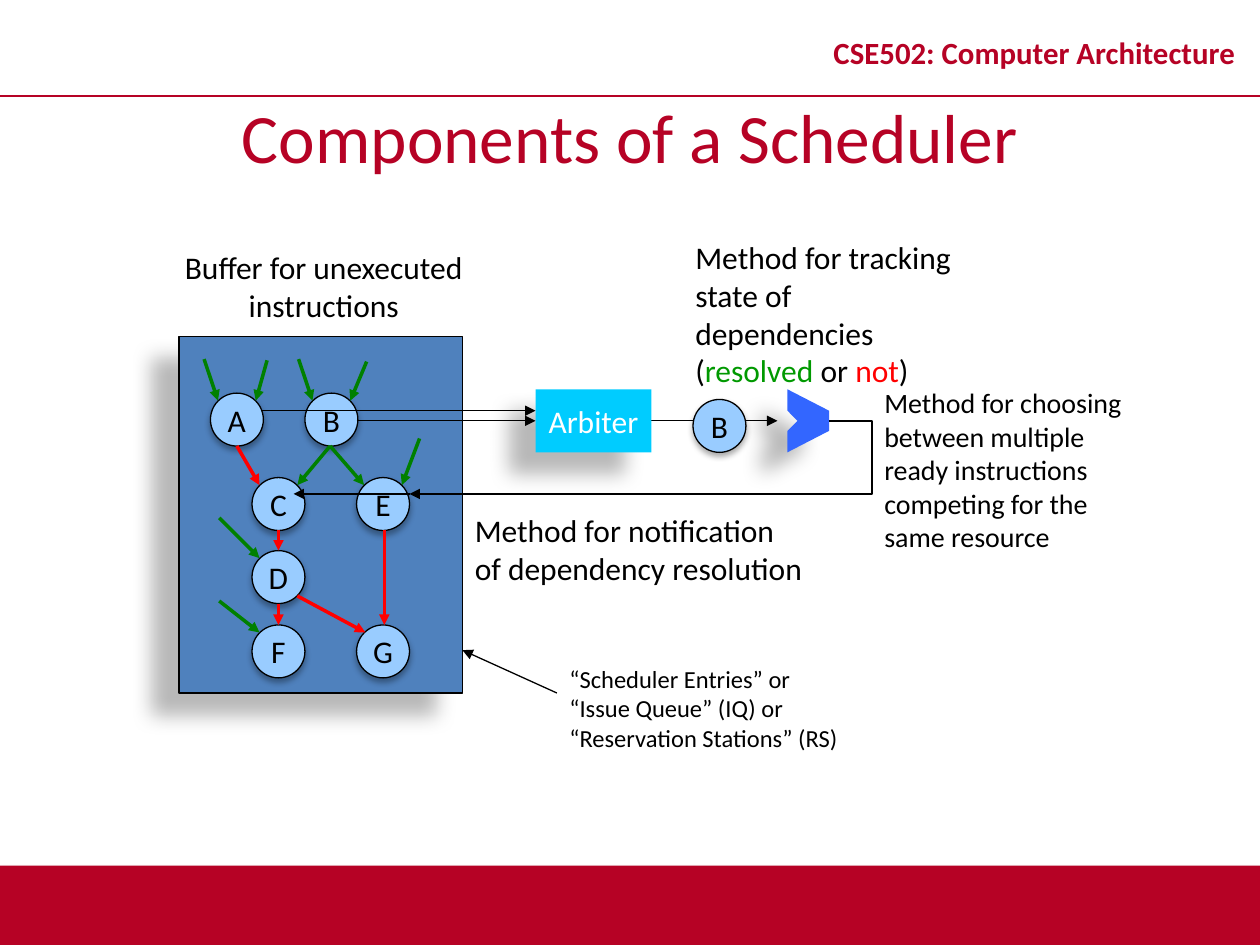
from lxml.etree import SubElement
from pptx import Presentation
from pptx.dml.color import RGBColor
from pptx.enum.shapes import MSO_CONNECTOR as CONNECTOR, MSO_SHAPE as SHAPE
from pptx.enum.text import MSO_ANCHOR as ANCHOR, PP_ALIGN as ALIGN
from pptx.oxml.ns import qn
from pptx.util import Inches, Pt

CRIMSON = RGBColor(0xB6, 0x02, 0x25)
BLACK = RGBColor(0x00, 0x00, 0x00)
WHITE = RGBColor(0xFF, 0xFF, 0xFF)
BUFFER_BLUE = RGBColor(0x4F, 0x81, 0xBD)
NODE_BLUE = RGBColor(0x99, 0xCC, 0xFF)
ARBITER_BLUE = RGBColor(0x00, 0xCC, 0xFF)
UNIT_BLUE = RGBColor(0x33, 0x66, 0xFF)
GREEN = RGBColor(0x00, 0x80, 0x00)
RESOLVED_GREEN = RGBColor(0x00, 0x99, 0x00)
RED = RGBColor(0xFF, 0x00, 0x00)

FONT = "Calibri"
NODE_SIZE = 0.42
BAR_SHADOW = (35, 3.1, 1.8, 90)
BLOCK_SHADOW = (28, 11.8, 19.7, 141)
NODE_SHADOW = (32, 3.5, 2.2, 90)


def paint(shape, fill, shadow, outlined=False, label="", label_color=BLACK):
    shape.fill.solid()
    shape.fill.fore_color.rgb = fill
    if outlined:
        shape.line.color.rgb = BLACK
        shape.line.width = Pt(0.75)
    else:
        shape.line.fill.background()
    shape.shadow.inherit = False
    opacity, blur, distance, angle = shadow
    outer = SubElement(shape._element.spPr.find(qn("a:effectLst")), qn("a:outerShdw"),
                       blurRad=str(Pt(blur)), dist=str(Pt(distance)),
                       dir=str(angle * 60000), algn="ctr", rotWithShape="0")
    color = SubElement(outer, qn("a:srgbClr"), val="000000")
    SubElement(color, qn("a:alpha"), val=str(opacity * 1000))
    if label:
        frame = shape.text_frame
        frame.text = label
        frame.word_wrap = False
        frame.vertical_anchor = ANCHOR.MIDDLE
        paragraph = frame.paragraphs[0]
        paragraph.alignment = ALIGN.CENTER
        paragraph.font.name = FONT
        paragraph.font.size = Pt(18)
        paragraph.font.color.rgb = label_color


def stroke(line, color=BLACK, width=0.75, arrow=True):
    line.line.color.rgb = color
    line.line.width = Pt(width)
    if arrow:
        SubElement(line.line._get_or_add_ln(), qn("a:tailEnd"), type="triangle")
    SubElement(line._element.spPr, qn("a:effectLst"))


presentation = Presentation()
presentation.slide_width = Inches(10)
presentation.slide_height = Inches(7.5)
slide = presentation.slides.add_slide(presentation.slide_layouts[5])
shapes = slide.shapes

footer = shapes.add_shape(SHAPE.RECTANGLE, 0, Inches(6.87), Inches(10), Inches(0.63))
paint(footer, CRIMSON, BAR_SHADOW)
rule = shapes.add_connector(CONNECTOR.STRAIGHT, 0, Inches(0.76), Inches(10), Inches(0.76))
stroke(rule, CRIMSON, 1, arrow=False)

title = shapes.title
title.left, title.top = Inches(0), Inches(0.76)
title.width, title.height = Inches(10), Inches(0.63)
title.text_frame.text = "Components of a Scheduler"
title.text_frame.vertical_anchor = ANCHOR.MIDDLE
paragraph = title.text_frame.paragraphs[0]
paragraph.alignment = ALIGN.CENTER
font = paragraph.runs[0].font
font.name, font.size, font.color.rgb = FONT, Pt(39.6), CRIMSON

buffer = shapes.add_shape(SHAPE.RECTANGLE, Inches(1.42), Inches(2.67), Inches(2.25), Inches(2.83))
paint(buffer, BUFFER_BLUE, BLOCK_SHADOW, outlined=True)

nodes = [
    ("A", 1.67, 3.12), ("B", 2.42, 3.12),
    ("C", 2, 3.79), ("E", 2.83, 3.79),
    ("D", 2, 4.37),
    ("F", 2, 4.96), ("G", 2.83, 4.96),
]
for name, left, top in nodes:
    node = shapes.add_shape(SHAPE.OVAL, Inches(left), Inches(top), Inches(NODE_SIZE), Inches(NODE_SIZE))
    paint(node, NODE_BLUE, NODE_SHADOW, True, name)

resolved = [
    (1.62, 2.85, 1.73, 3.18), (2.12, 2.86, 2.03, 3.18),
    (2.37, 2.85, 2.48, 3.18), (2.91, 2.87, 2.78, 3.18),
    (3.33, 3.48, 3.19, 3.85), (1.74, 4.11, 2.06, 4.43),
    (1.74, 4.77, 2.06, 5.02),
    (2.62, 3.54, 2.36, 3.85), (2.62, 3.54, 2.89, 3.85),
]
unresolved = [
    (1.88, 3.54, 2.06, 3.85), (3.05, 4.21, 3.05, 4.96),
    (2.21, 4.21, 2.21, 4.37), (2.21, 4.79, 2.21, 4.96),
    (2.36, 4.73, 2.9, 5.02),
]
signals = [
    (5.17, 3.34, 6.17, 3.34), (2.08, 3.26, 4.25, 3.26),
    (2.83, 3.34, 4.25, 3.34), (3.25, 3.92, 2.33, 3.92),
    (4.42, 5.5, 3.67, 5.16),
]
for group, color, width in [(resolved, GREEN, 2), (unresolved, RED, 2), (signals, BLACK, 0.75)]:
    for ends in group:
        arrow = shapes.add_connector(CONNECTOR.STRAIGHT, *[Inches(value) for value in ends])
        stroke(arrow, color, width)

unit_points = [(6.25, 3.09), (6.25, 3.26), (6.33, 3.34), (6.25, 3.42),
               (6.25, 3.59), (6.58, 3.42), (6.58, 3.26)]
notify_points = [(6.58, 3.34), (6.92, 3.34), (6.92, 3.92), (3.25, 3.92)]
outlines = []
for points, closed in [(unit_points, True), (notify_points, False)]:
    corners = [(Inches(x), Inches(y)) for x, y in points]
    builder = shapes.build_freeform(*corners[0])
    builder.add_line_segments(corners[1:], close=closed)
    outlines.append(builder.convert_to_shape())
unit, notify = outlines
paint(unit, UNIT_BLUE, BLOCK_SHADOW)
notify.fill.background()
stroke(notify)

arbiter = shapes.add_shape(SHAPE.RECTANGLE, Inches(4.25), Inches(3.09), Inches(0.92), Inches(0.5))
paint(arbiter, ARBITER_BLUE, BLOCK_SHADOW, label="Arbiter", label_color=WHITE)
issued = shapes.add_shape(SHAPE.OVAL, Inches(5.5), Inches(3.17), Inches(NODE_SIZE), Inches(NODE_SIZE))
paint(issued, NODE_BLUE, NODE_SHADOW, True, "B")

captions = [
    (6.42, 0.13, 3.58, 0.63, 17.6, CRIMSON, ALIGN.CENTER, True, ["CSE502: Computer Architecture"]),
    (1.35, 1.92, 2.44, 0.71, 18, BLACK, ALIGN.CENTER, False, ["Buffer for unexecuted", "instructions"]),
    (5.42, 1.84, 2.42, 1, 18, BLACK, ALIGN.LEFT, True,
     ["Method for tracking", "state of dependencies", "(|resolved| or |not|)"]),
    (6.92, 3.01, 2.08, 1.72, 16, BLACK, ALIGN.LEFT, True,
     ["Method for choosing between multiple ready instructions competing for the same resource"]),
    (3.67, 4.01, 2.8, 0.71, 18, BLACK, ALIGN.LEFT, False,
     ["Method for notification", "of dependency resolution"]),
    (4.42, 5.22, 2.4, 0.81, 14, BLACK, ALIGN.LEFT, True,
     ["“Scheduler Entries” or", "“Issue Queue” (IQ) or", "“Reservation Stations” (RS)"]),
]
state_colors = {"resolved": RESOLVED_GREEN, "not": RED}
for left, top, width, height, size, color, alignment, wrap, lines in captions:
    box = shapes.add_textbox(Inches(left), Inches(top), Inches(width), Inches(height))
    frame = box.text_frame
    frame.word_wrap = wrap
    for index, line in enumerate(lines):
        paragraph = frame.add_paragraph() if index else frame.paragraphs[0]
        paragraph.alignment = alignment
        for part in line.split("|"):
            run = paragraph.add_run()
            run.text = part
            run.font.name = FONT
            run.font.size = Pt(size)
            run.font.color.rgb = state_colors.get(part, color)
            if color == CRIMSON:
                run.font.bold = True
                paragraph.line_spacing = 0.8
                frame.vertical_anchor = ANCHOR.MIDDLE

presentation.save("out.pptx")
